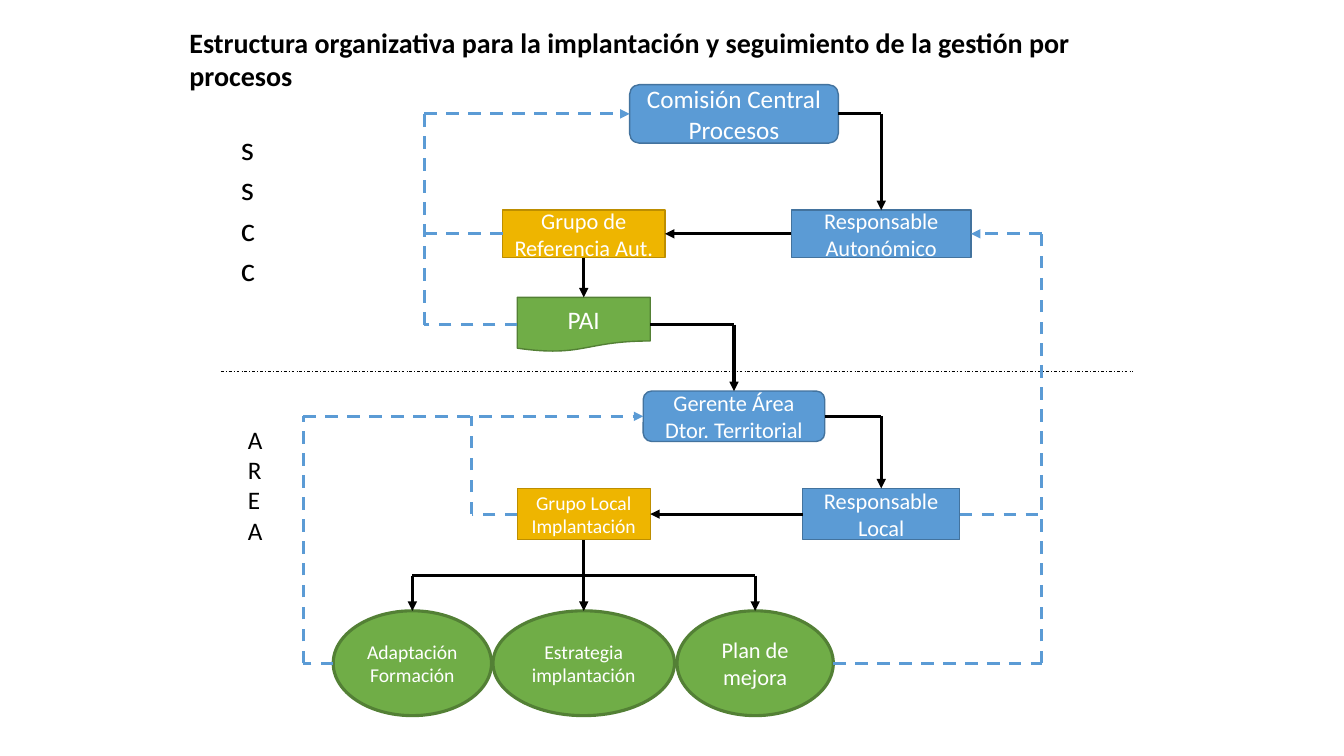
from dataclasses import dataclass

from lxml import etree
from pptx import Presentation
from pptx.dml.color import RGBColor
from pptx.enum.dml import MSO_LINE
from pptx.enum.shapes import MSO_CONNECTOR, MSO_SHAPE
from pptx.enum.text import MSO_ANCHOR, MSO_AUTO_SIZE, PP_ALIGN
from pptx.oxml.ns import qn
from pptx.util import Inches, Pt

RECT = MSO_SHAPE.RECTANGLE
ROUND = MSO_SHAPE.ROUNDED_RECTANGLE
DOCUMENT = MSO_SHAPE.FLOWCHART_DOCUMENT
OVAL = MSO_SHAPE.OVAL
STRAIGHT = MSO_CONNECTOR.STRAIGHT
DASH = MSO_LINE.DASH
DASH_DOT = MSO_LINE.DASH_DOT
MIDDLE = MSO_ANCHOR.MIDDLE
CENTER = PP_ALIGN.CENTER
GROW = MSO_AUTO_SIZE.SHAPE_TO_FIT_TEXT


@dataclass(frozen=True)
class Theme:
    font: str = "Calibri"
    black: str = "000000"
    white: str = "FFFFFF"
    blue: tuple = ("5B9BD5", "43739E")
    gold: tuple = ("EEB500", "BD8E00")
    green: tuple = ("70AD47", "538035")
    title: int = 20
    side: int = 24
    large: int = 18
    medium: int = 16
    small: int = 14
    thin: float = 0.5
    outline: float = 1
    thick: float = 2.25


@dataclass(frozen=True)
class Box:
    x: float
    y: float
    w: float
    h: float

    @property
    def cx(self):
        return self.x + self.w / 2

    @property
    def cy(self):
        return self.y + self.h / 2

    @property
    def right(self):
        return self.x + self.w

    @property
    def bottom(self):
        return self.y + self.h

    def inches(self):
        return [Inches(v) for v in (self.x, self.y, self.w, self.h)]


THEME = Theme()


def rgb(value):
    return RGBColor.from_string(value)


def add_run(p, text, size, color, bold=False):
    r = p.add_run()
    r.text = text
    r.font.name = THEME.font
    r.font.size = Pt(size)
    r.font.bold = bold
    r.font.color.rgb = rgb(color)


def add_node(slide, kind, cx, cy, w, h, colors, size, *lines, outline=THEME.outline):
    box = Box(cx - w / 2, cy - h / 2, w, h)
    sp = slide.shapes.add_shape(kind, *box.inches())
    sp.shadow.inherit = False
    sp.fill.solid()
    sp.fill.fore_color.rgb = rgb(colors[0])
    sp.line.color.rgb = rgb(colors[1])
    sp.line.width = Pt(outline)
    tf = sp.text_frame
    tf.word_wrap = True
    tf.vertical_anchor = MIDDLE
    for i, line in enumerate(lines):
        p = tf.add_paragraph() if i else tf.paragraphs[0]
        p.alignment = CENTER
        add_run(p, line, size, THEME.white)
    return box


def add_label(slide, box, text, size, bold=False, vertical=False):
    tf = slide.shapes.add_textbox(*box.inches()).text_frame
    tf.word_wrap = True
    tf.auto_size = GROW
    if vertical:
        tf._txBody.bodyPr.set("vert", "wordArtVert")
    add_run(tf.paragraphs[0], text, size, THEME.black, bold)


def add_route(slide, points, color=THEME.black, dash=None, width=THEME.thick, arrow=True):
    for i, (start, end) in enumerate(zip(points, points[1:]), 1):
        line = slide.shapes.add_connector(STRAIGHT, *[Inches(v) for v in (*start, *end)])
        line.line.color.rgb = rgb(color)
        line.line.width = Pt(width)
        if dash:
            line.line.dash_style = dash
        if arrow and i == len(points) - 1:
            tail = etree.SubElement(line.line._get_or_add_ln(), qn("a:tailEnd"))
            tail.set("type", "triangle")
        etree.SubElement(line._element.spPr, qn("a:effectLst"))


def add_feedback(slide, points, arrow=True):
    add_route(slide, points, THEME.blue[0], DASH, arrow=arrow)


def add_chain(slide, head, manager, group):
    add_route(slide, [(head.right, head.cy), (manager.cx, head.cy), (manager.cx, manager.y)])
    add_route(slide, [(manager.x, manager.cy), (group.right, group.cy)])


def draw_title(slide, box):
    add_label(slide, box, "Estructura organizativa para la implantación y seguimiento "
              "de la gestión por procesos", THEME.title, bold=True)


def draw_central(slide, box):
    group_x, head_x, manager_x = (box.x + dx for dx in (3.6, 5.09, 6.55))
    top, middle, low = (box.y + dy for dy in (0.29, 1.48, 2.38))
    head = add_node(slide, ROUND, head_x, top, 2.07, 0.58, THEME.blue, THEME.large,
                    "Comisión Central Procesos")
    manager = add_node(slide, RECT, manager_x, middle, 1.78, 0.47, THEME.blue, THEME.medium,
                       "Responsable Autonómico")
    group = add_node(slide, RECT, group_x, middle, 1.61, 0.47, THEME.gold, THEME.medium,
                     "Grupo de Referencia Aut.")
    pai = add_node(slide, DOCUMENT, group_x, low, 1.32, 0.54, THEME.green, THEME.large, "PAI")
    add_chain(slide, head, manager, group)
    add_route(slide, [(group.cx, group.bottom), (pai.cx, pai.y)])
    lane = box.x + 2.02
    add_feedback(slide, [(pai.x, low), (lane, low), (lane, top), (head.x, top)])
    add_feedback(slide, [(group.x, middle), (lane, middle)], arrow=False)
    add_label(slide, Box(box.x + 0.1, box.y + 0.37, 0.68, 2.1), "sscc", THEME.side,
              vertical=True)
    return manager, pai


def draw_area(slide, box):
    group_x, head_x, manager_x = (box.x + dx for dx in (3.6, 5.09, 6.55))
    top, middle, low = (box.y + dy for dy in (0.45, 1.42, 2.9))
    head = add_node(slide, ROUND, head_x, top, 1.8, 0.5, THEME.blue, THEME.medium,
                    "Gerente Área", "Dtor. Territorial")
    manager = add_node(slide, RECT, manager_x, middle, 1.56, 0.51, THEME.blue, THEME.medium,
                       "Responsable", "Local")
    group = add_node(slide, RECT, group_x, middle, 1.32, 0.51, THEME.gold, THEME.small,
                     "Grupo Local Implantación")
    add_chain(slide, head, manager, group)

    bus = box.y + 2.03
    add_route(slide, [(group.cx, group.bottom), (group.cx, bus)], arrow=False)
    results = [("Adaptación Formación", 1.57, THEME.small),
               ("Estrategia implantación", 1.8, THEME.small),
               ("Plan de mejora", 1.55, THEME.medium)]
    ovals = []
    for i, (text, w, size) in enumerate(results):
        oval = add_node(slide, OVAL, group_x + (i - 1) * 1.7, low, w, 1.04, THEME.green, size,
                        text, outline=THEME.thick)
        add_route(slide, [(oval.cx, bus), (oval.cx, oval.y)])
        ovals.append(oval)
    add_route(slide, [(ovals[0].cx, bus), (ovals[-1].cx, bus)], arrow=False)

    outer, inner = box.x + 0.82, box.x + 2.49
    add_feedback(slide, [(ovals[0].x, low), (outer, low), (outer, top), (head.x, top)])
    add_feedback(slide, [(group.x, middle), (inner, middle), (inner, top)], arrow=False)
    add_label(slide, Box(box.x + 0.17, box.y + 0.48, 0.56, 1.92), "AREA", THEME.large,
              vertical=True)
    return head, manager, ovals[-1]


def draw_links(slide, box, regional, pai, head, local, plan):
    add_route(slide, [(box.x, box.y), (box.right, box.y)], dash=DASH_DOT, width=THEME.thin,
              arrow=False)
    add_route(slide, [(pai.right, pai.cy), (head.cx, pai.cy), (head.cx, head.y)])
    lane = box.x + 8.14
    add_feedback(slide, [(plan.right, plan.cy), (lane, plan.cy), (lane, regional.cy),
                         (regional.right, regional.cy)])
    add_feedback(slide, [(local.right, local.cy), (lane, local.cy)], arrow=False)


def main():
    prs = Presentation()
    prs.slide_width, prs.slide_height = Inches(13.33), Inches(7.5)
    slide = prs.slides.add_slide(prs.slide_layouts[6])
    central = Box(2.19, 0.84, 9.05, 2.84)
    area = Box(central.x, central.bottom, central.w, 3.42)
    regional, pai = draw_central(slide, central)
    head, local, plan = draw_area(slide, area)
    draw_links(slide, area, regional, pai, head, local, plan)
    draw_title(slide, Box(1.78, 0.2, 10.01, 0.44))
    prs.save("out.pptx")


if __name__ == "__main__":
    main()
